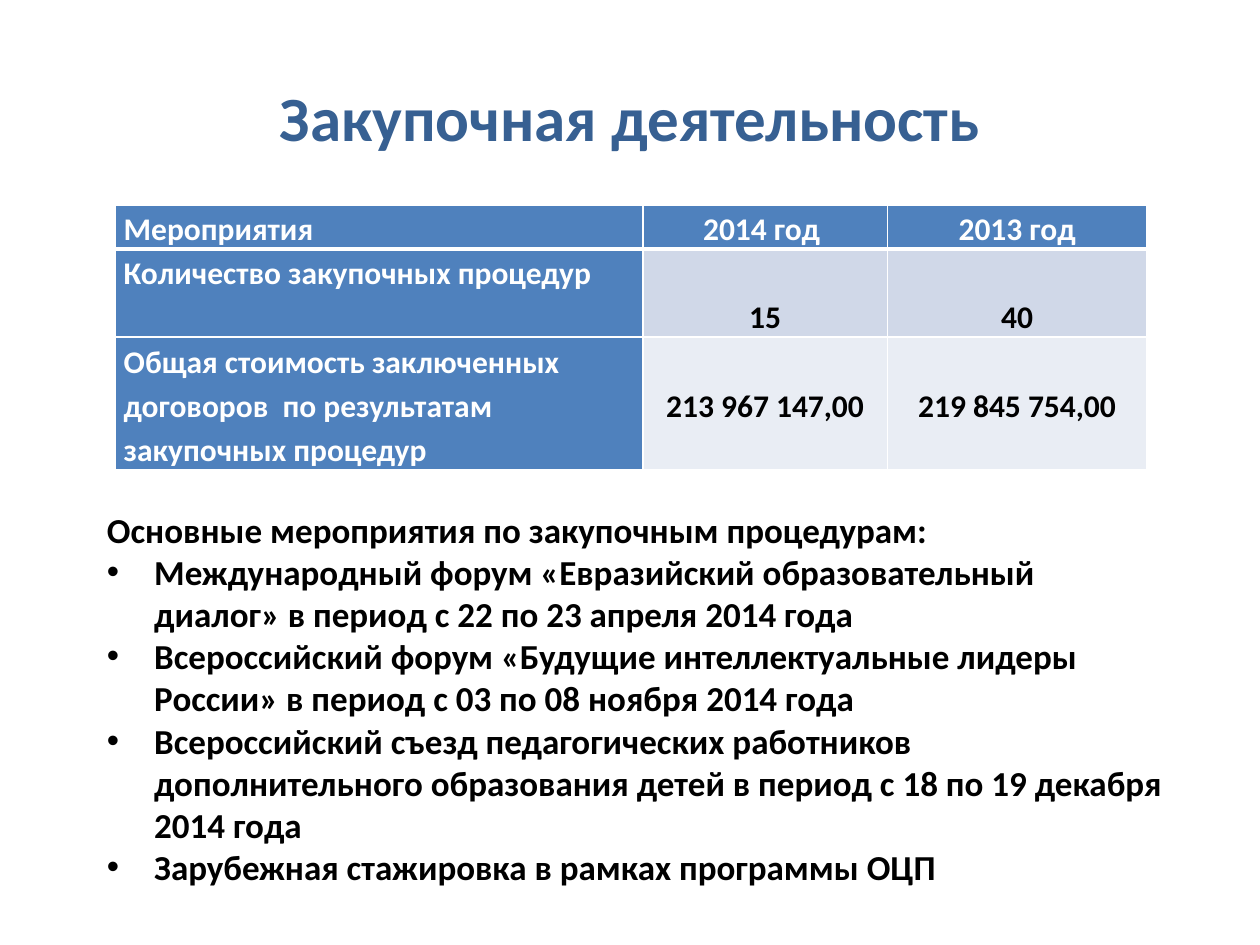
from lxml import etree
from pptx import Presentation
from pptx.dml.color import RGBColor
from pptx.enum.text import MSO_ANCHOR, MSO_AUTO_SIZE, PP_ALIGN
from pptx.oxml.ns import qn
from pptx.util import Pt

LEFT, CENTER = PP_ALIGN.LEFT, PP_ALIGN.CENTER
TOP, MIDDLE, BOTTOM = MSO_ANCHOR.TOP, MSO_ANCHOR.MIDDLE, MSO_ANCHOR.BOTTOM
GROW = MSO_AUTO_SIZE.SHAPE_TO_FIT_TEXT

COLORS = {"title": "376092", "head": "4F81BD", "white": "FFFFFF", "black": "000000"}
BANDS = ["D0D8E8", "E9EDF4"]
FONT = "Calibri"

TITLE = "Закупочная деятельность"
ROWS = [
    ("Мероприятия", "2014 год ", "2013 год"),
    ("Количество закупочных процедур", "15", "40"),
    ("Общая стоимость заключенных договоров  по результатам закупочных процедур",
     "213 967 147,00", "219 845 754,00"),
]
ROW_LINES = [1, 2, 3]
LINE_HEIGHT = 25.2
COL_WIDTHS = [301.7, 139.7, 148.3]
INTRO = "Основные мероприятия по закупочным процедурам:"
EVENTS = [
    "Международный форум «Евразийский образовательный диалог» в период с 22 по 23 апреля 2014 года",
    "Всероссийский форум «Будущие интеллектуальные лидеры России» в период с 03 по 08 ноября 2014 года",
    "Всероссийский съезд педагогических работников дополнительного образования детей "
    "в период с 18 по 19 декабря 2014 года",
    "Зарубежная стажировка в рамках программы ОЦП",
]
INDENT = 27


def style(p, size, color, align=LEFT):
    p.alignment = align
    for r in p.runs:
        r.font.name, r.font.size, r.font.bold = FONT, Pt(size), True
        r.font.color.rgb = RGBColor.from_string(color)


def add_borders(cell, bottom):
    tcPr = cell._tc.get_or_add_tcPr()
    for i, (side, width) in enumerate([("L", 1), ("R", 1), ("T", 1), ("B", bottom)]):
        ln = etree.Element(qn("a:ln" + side), w=str(Pt(width)))
        fill = etree.SubElement(ln, qn("a:solidFill"))
        etree.SubElement(fill, qn("a:srgbClr"), val=COLORS["white"])
        tcPr.insert(i, ln)


def add_title(s):
    sp = s.shapes.title
    sp.left, sp.top, sp.width, sp.height = Pt(36), Pt(21.6), Pt(648), Pt(90)
    tf = sp.text_frame
    tf.text, tf.vertical_anchor = TITLE, MIDDLE
    style(tf.paragraphs[0], 36, COLORS["title"], CENTER)


def add_purchases(s):
    heights = [n * LINE_HEIGHT for n in ROW_LINES]
    table = s.shapes.add_table(len(ROWS), len(COL_WIDTHS), Pt(65.7), Pt(117),
                               Pt(sum(COL_WIDTHS)), Pt(sum(heights))).table
    for col, width in zip(table.columns, COL_WIDTHS):
        col.width = Pt(width)
    for i, (texts, height) in enumerate(zip(ROWS, heights)):
        table.rows[i].height = Pt(height)
        for j, text in enumerate(texts):
            cell = table.cell(i, j)
            header = i == 0 or j == 0
            cell.text = text
            cell.margin_left = cell.margin_right = Pt(5)
            cell.margin_top = cell.margin_bottom = 0
            cell.vertical_anchor = (TOP if j == 0 else BOTTOM) if i == 1 else MIDDLE
            cell.fill.solid()
            cell.fill.fore_color.rgb = RGBColor.from_string(
                COLORS["head"] if header else BANDS[i - 1])
            add_borders(cell, 3 if i == 0 else 1)
            p = cell.text_frame.paragraphs[0]
            p.line_spacing = 1.15
            style(p, 18, COLORS["white" if header else "black"], CENTER if j else LEFT)


def add_events(s):
    tf = s.shapes.add_textbox(Pt(54), Pt(287.3), Pt(617.8), Pt(225.4)).text_frame
    tf.word_wrap, tf.auto_size = True, GROW
    tf.text = "\n".join([INTRO] + EVENTS)
    for i, p in enumerate(tf.paragraphs):
        if i:
            pPr = p._p.get_or_add_pPr()
            pPr.set("marL", str(Pt(INDENT)))
            pPr.set("indent", str(Pt(-INDENT)))
            etree.SubElement(pPr, qn("a:buFont"), typeface="Arial")
            etree.SubElement(pPr, qn("a:buChar"), char="•")
        style(p, 20, COLORS["black"])


def main():
    """Build the procurement slide."""
    prs = Presentation()
    prs.slide_width, prs.slide_height = Pt(720), Pt(540)
    s = prs.slides.add_slide(prs.slide_layouts[5])
    add_title(s)
    add_purchases(s)
    add_events(s)
    prs.save("out.pptx")


if __name__ == "__main__":
    main()
